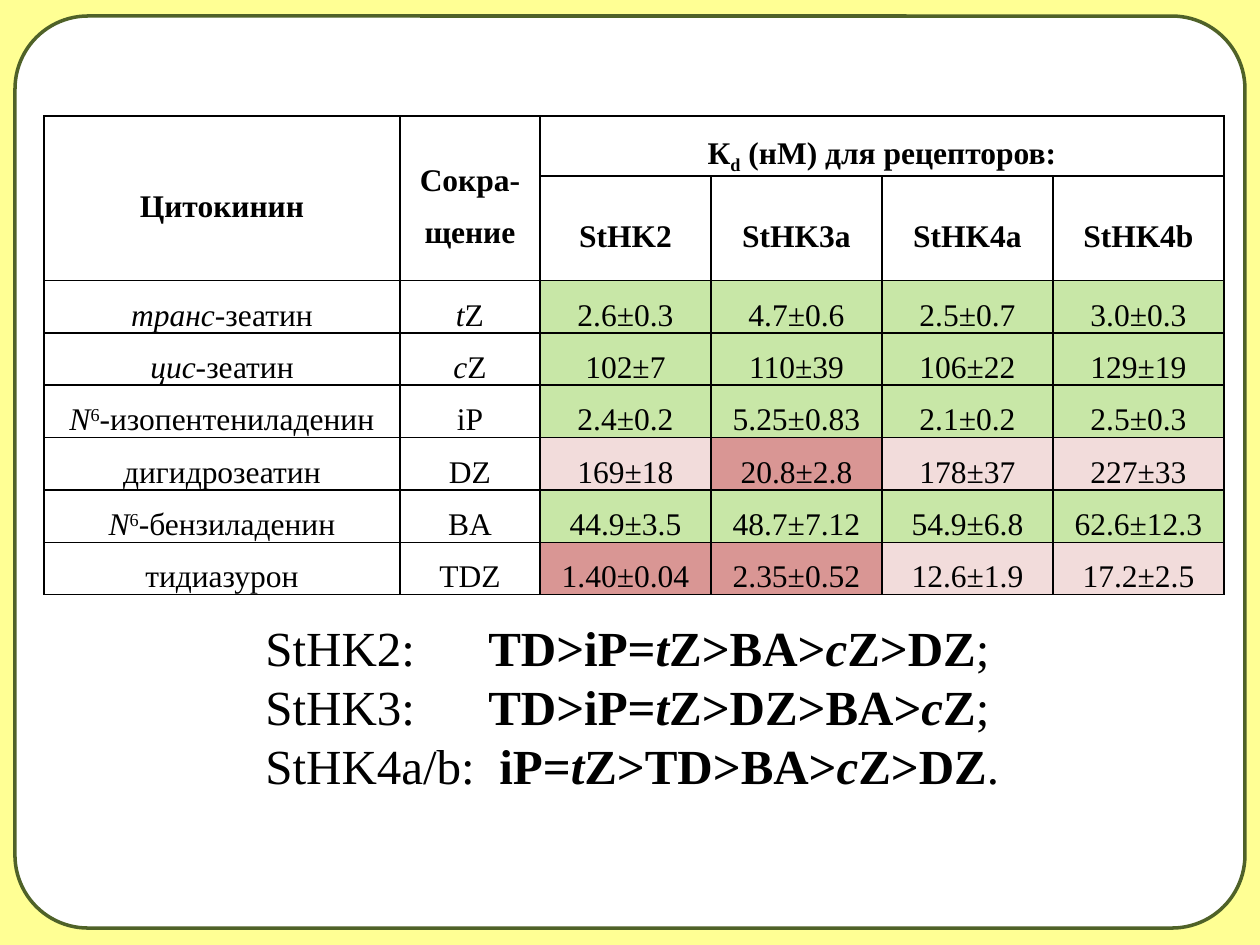
"""Slide with cytokinin binding constants and the receptor preference orders."""
from itertools import product

from lxml import etree
from pptx import Presentation
from pptx.dml.color import RGBColor
from pptx.enum.shapes import MSO_SHAPE
from pptx.enum.text import MSO_ANCHOR, PP_ALIGN
from pptx.oxml.ns import qn
from pptx.util import Emu, Pt

ROUND = MSO_SHAPE.ROUNDED_RECTANGLE
MIDDLE = MSO_ANCHOR.MIDDLE
CENTER = PP_ALIGN.CENTER
FONT = "Times New Roman"
COLORS = {
    "back": "FFFF94", "panel": "FFFFFF", "edge": "4F6228", "ink": "000000",
    "g": "C8E7A7", "p": "F2DCDB", "r": "D99694",
}
MARKS = "*_^~"
WIDTHS = [356, 140, 171, 171, 171, 171]
HEIGHTS = [60, 104] + [52] * 6
HEADS = [
    ["*Цитокинин*", "*Сокра-щение*", "*К~d~ (нM) для рецепторов:*", "", "", ""],
    ["", "", "*StHK2*", "*StHK3a*", "*StHK4a*", "*StHK4b*"],
]
ROWS = [
    ["_транс-_зеатин", "_t_Z", "2.6±0.3", "4.7±0.6", "2.5±0.7", "3.0±0.3"],
    ["_цис-_зеатин", "_c_Z", "102±7", "110±39", "106±22", "129±19"],
    ["_N_^6^-изопентениладенин", "iP", "2.4±0.2", "5.25±0.83", "2.1±0.2", "2.5±0.3"],
    ["дигидрозеатин", "DZ", "169±18", "20.8±2.8", "178±37", "227±33"],
    ["_N_^6^-бензиладенин", "BA", "44.9±3.5", "48.7±7.12", "54.9±6.8", "62.6±12.3"],
    ["тидиазурон", "TDZ", "1.40±0.04", "2.35±0.52", "12.6±1.9", "17.2±2.5"],
]
TINTS = ["gggg", "gggg", "gggg", "prpp", "gggg", "rrpp"]
ORDERS = [
    ("StHK2:\t*TD>iP=_t_Z>BA>_c_Z>DZ*;", 223),
    ("StHK3:\t*TD>iP=_t_Z>DZ>BA>_c_Z*;", 223),
    ("StHK4a/b:\t*iP=_t_Z>TD>BA>_c_Z>DZ*.", 234),
]


def px(n):
    """Turn px into EMU."""
    return Emu(round(n * 914400 / 126))


def color(name):
    """Return the named colour."""
    return RGBColor.from_string(COLORS[name])


def split(text):
    """Yield each piece of marked text with the marks that hold for it."""
    live, piece = set(), ""
    for char in text:
        if char not in MARKS:
            piece += char
            continue
        if piece:
            yield piece, set(live)
        live ^= {char}
        piece = ""
    if piece:
        yield piece, live


def write(para, text, size):
    """Fill a paragraph with marked text."""
    for piece, live in split(text):
        run = para.add_run()
        run.text = piece
        font = run.font
        font.name, font.size = FONT, Pt(size)
        font.color.rgb = color("ink")
        font.bold, font.italic = "*" in live, "_" in live
        for mark, shift in (("^", "30000"), ("~", "-25000")):
            if mark in live:
                run._r.get_or_add_rPr().set("baseline", shift)


def border(cell):
    """Draw a thin line on all sides of a cell."""
    props = cell._tc.get_or_add_tcPr()
    for side in ("a:lnL", "a:lnR", "a:lnT", "a:lnB"):
        line = etree.SubElement(props, qn(side), w=str(Pt(1)))
        fill = etree.SubElement(line, qn("a:solidFill"))
        etree.SubElement(fill, qn("a:srgbClr"), val=COLORS["ink"])


def panel(slide, x, y, w, h):
    """Place the rounded white panel."""
    shape = slide.shapes.add_shape(ROUND, px(x), px(y), px(w), px(h))
    shape.shadow.inherit = False
    shape.adjustments[0] = 0.08
    shape.fill.solid()
    shape.fill.fore_color.rgb = color("panel")
    shape.line.color.rgb = color("edge")
    shape.line.width = Pt(2)


def grid(slide, x, y):
    """Place the table of binding constants."""
    data = HEADS + ROWS
    rows, cols = len(data), len(WIDTHS)
    frame = slide.shapes.add_table(
        rows, cols, px(x), px(y), px(sum(WIDTHS)), px(sum(HEIGHTS)))
    table = frame.table
    table.first_row = table.horz_banding = False
    for col, width in zip(table.columns, WIDTHS):
        col.width = px(width)
    for row, height in zip(table.rows, HEIGHTS):
        row.height = px(height)
    for r, c in product(range(rows), range(cols)):
        cell = table.cell(r, c)
        border(cell)
        if r >= len(HEADS) and c >= 2:
            cell.fill.solid()
            cell.fill.fore_color.rgb = color(TINTS[r - len(HEADS)][c - 2])
        else:
            cell.fill.background()
        cell.margin_left = cell.margin_right = px(9)
        cell.margin_top = cell.margin_bottom = 0
        cell.vertical_anchor = MIDDLE
        para = cell.text_frame.paragraphs[0]
        para.alignment, para.line_spacing = CENTER, 1.5
        para.font.size = Pt(18)
        write(para, data[r][c], 18)
    for c in range(2):
        table.cell(0, c).merge(table.cell(1, c))
    table.cell(0, 2).merge(table.cell(0, cols - 1))


def orders(slide, x, y, w, h):
    """Place the preference order of each receptor."""
    frame = slide.shapes.add_textbox(px(x), px(y), px(w), px(h)).text_frame
    frame.word_wrap = True
    frame.vertical_anchor = MIDDLE
    for i, (text, stop) in enumerate(ORDERS):
        para = frame.add_paragraph() if i else frame.paragraphs[0]
        tabs = etree.SubElement(para._p.get_or_add_pPr(), qn("a:tabLst"))
        etree.SubElement(tabs, qn("a:tab"), pos=str(px(stop)), algn="l")
        write(para, text, 28)


def main():
    """Build and save the slide."""
    deck = Presentation()
    deck.slide_width, deck.slide_height = px(1260), px(945)
    slide = deck.slides.add_slide(deck.slide_layouts[6])
    back = slide.background.fill
    back.solid()
    back.fore_color.rgb = color("back")
    panel(slide, 15, 16, 1230, 912)
    grid(slide, 44, 116)
    orders(slide, 253, 611, 774, 190)
    deck.save("out.pptx")


if __name__ == "__main__":
    main()
